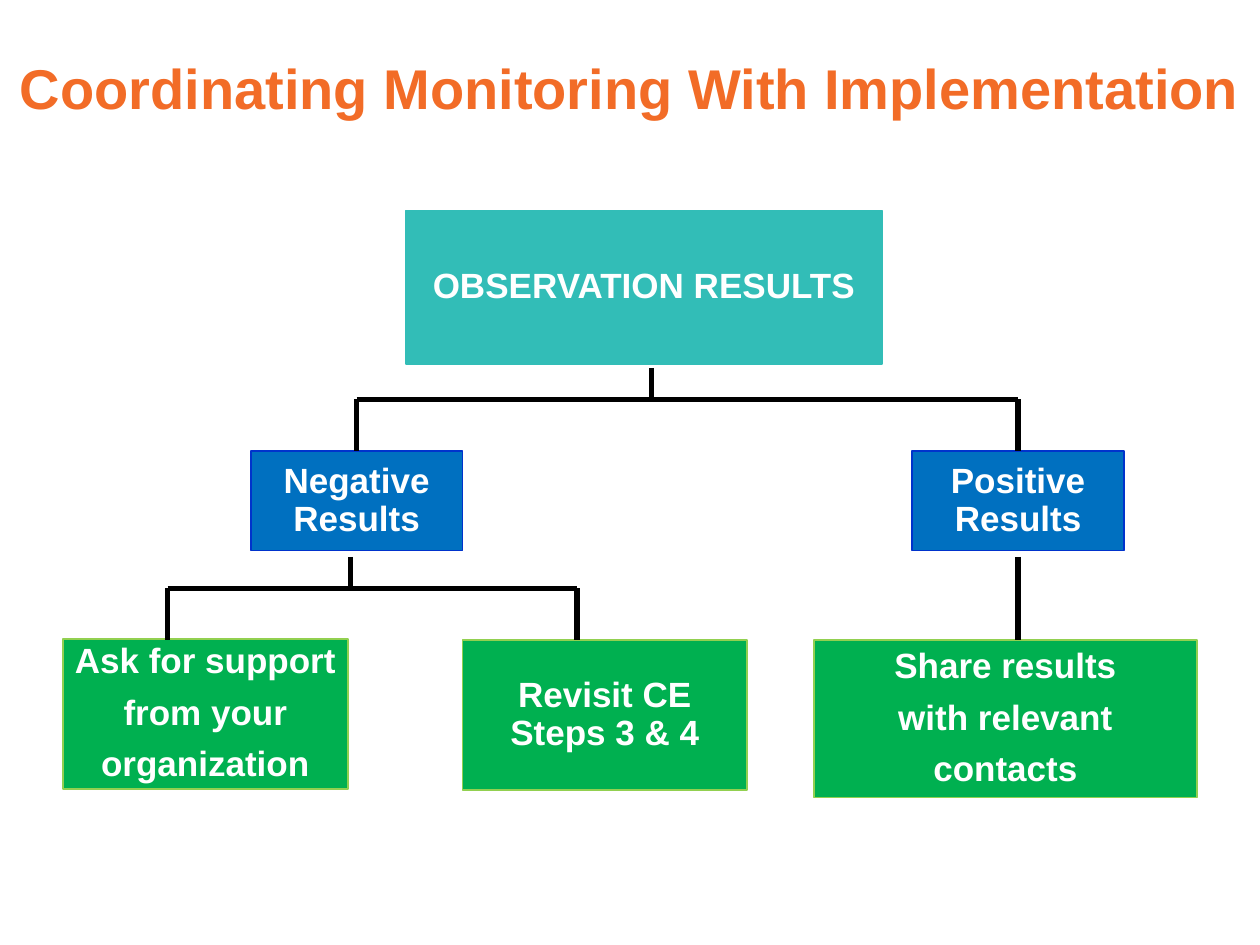
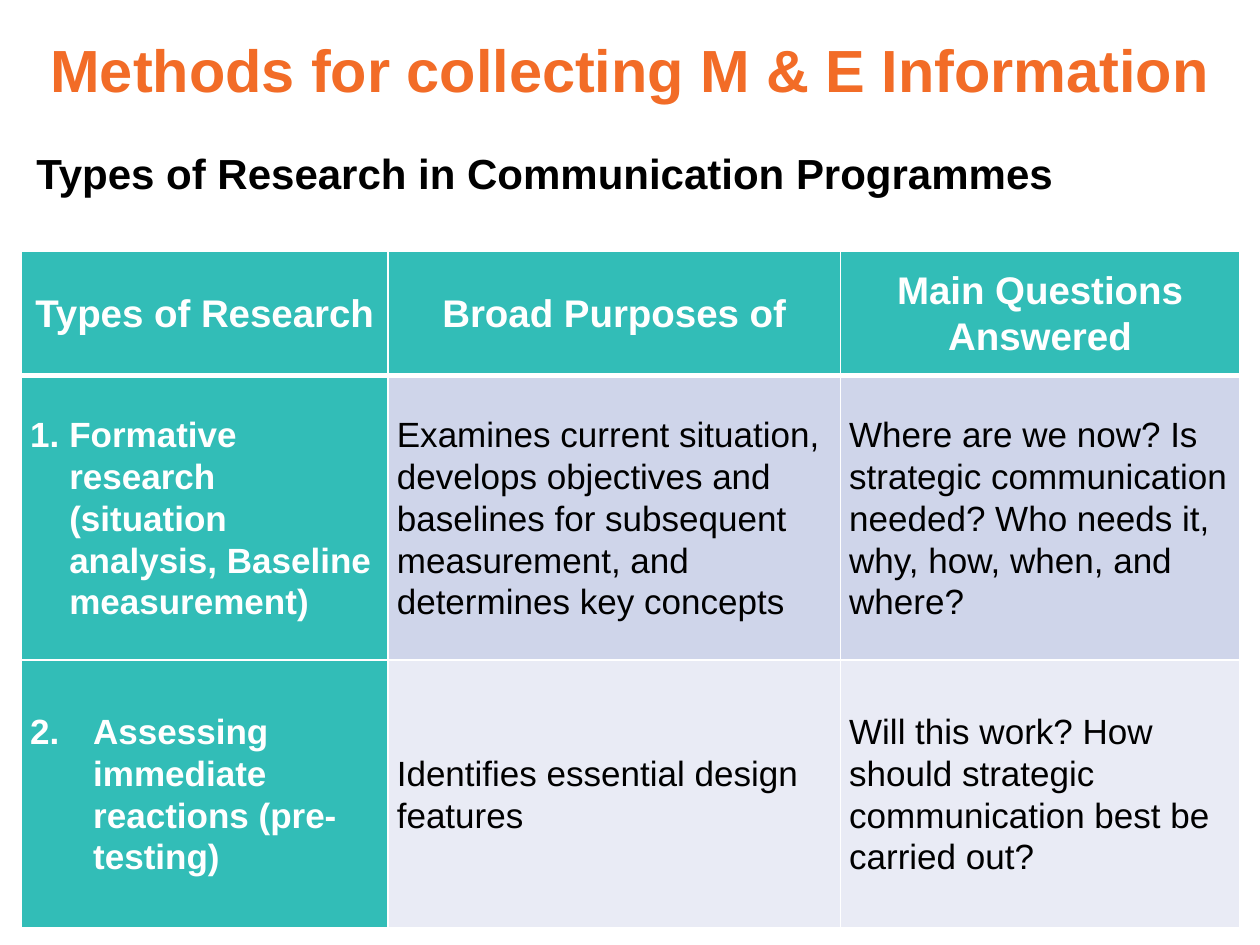
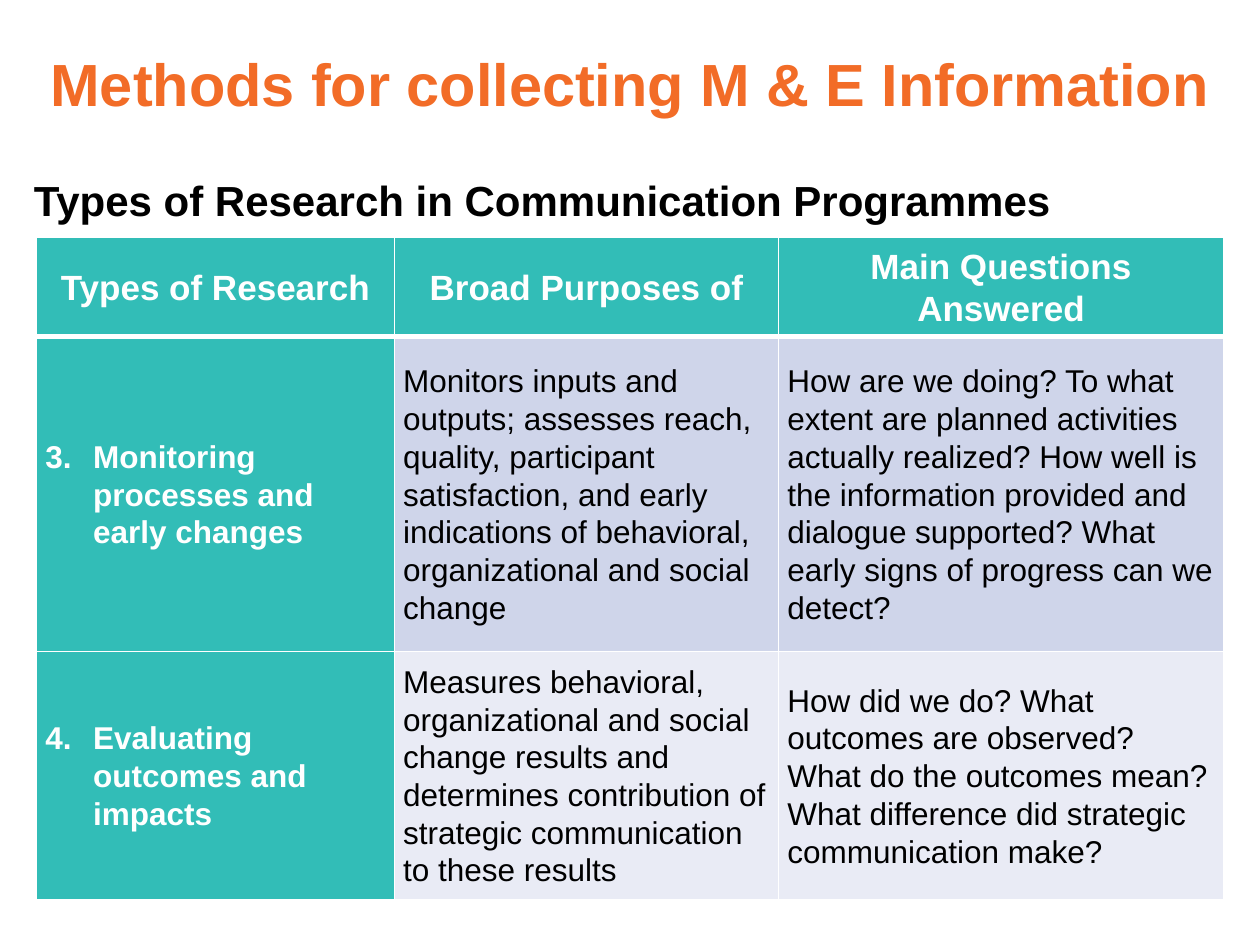
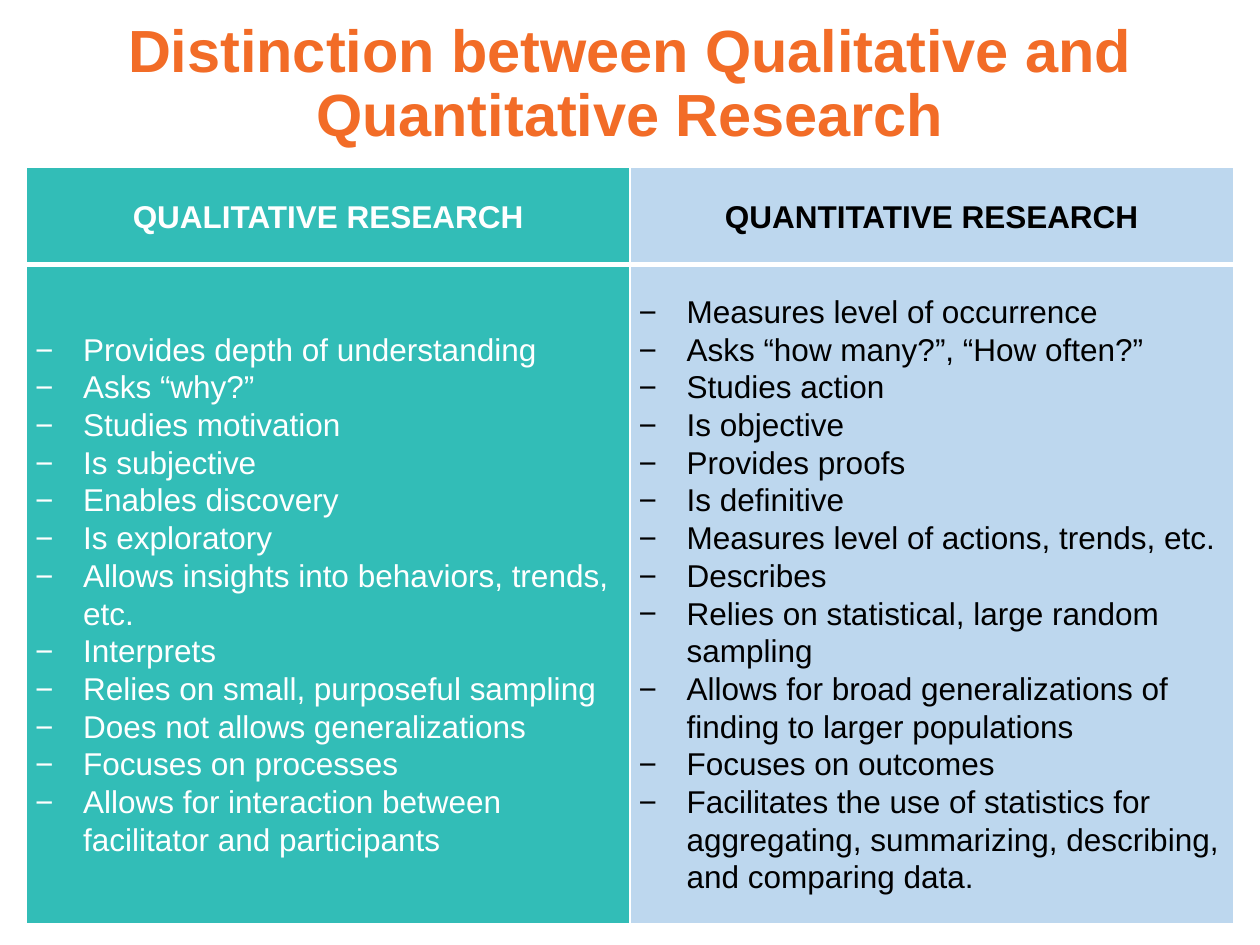
from pptx import Presentation
from pptx.dml.color import RGBColor
from pptx.enum.shapes import MSO_CONNECTOR, MSO_SHAPE
from pptx.enum.text import MSO_ANCHOR, MSO_AUTO_SIZE, PP_ALIGN
from pptx.oxml.ns import qn
from pptx.util import Inches, Pt
from lxml import etree

FONT = "Arial"
COLORS = {
    "orange": "F26C27", "teal": "32BDB7", "white": "FFFFFF", "black": "000000",
    "blue": "0070C0", "blue_edge": "0033CC", "green": "00B050", "green_edge": "92D050",
    "band_dark": "CFD5EA", "band_light": "E9EBF5", "pale_blue": "BDD7EE",
}
RGB = {name: RGBColor.from_string(value) for name, value in COLORS.items()}


def write(tf, lines, size=20, color="white", bold=True, align=PP_ALIGN.LEFT,
          spacing=0.9, after=0, indent=0, bullet=None):
    """Fill a text frame, one paragraph a line; bullet is a start number or a character."""
    tf.word_wrap = True
    for i, line in enumerate(lines):
        p = tf.paragraphs[0] if i == 0 else tf.add_paragraph()
        p.alignment, p.line_spacing = align, spacing
        p.space_before, p.space_after = Pt(0), Pt(after)
        r = p.add_run()
        r.text = line
        r.font.name, r.font.size, r.font.bold = FONT, Pt(size), bold
        r.font.color.rgb = RGB[color]
        if bullet:
            pPr = p._p.get_or_add_pPr()
            pPr.set("marL", str(Inches(indent)))
            pPr.set("indent", str(-Inches(indent)))
            if isinstance(bullet, int):
                etree.SubElement(pPr, qn("a:buAutoNum"), type="arabicPeriod",
                                 startAt=str(bullet))
            else:
                etree.SubElement(pPr, qn("a:buFont"), typeface=FONT)
                etree.SubElement(pPr, qn("a:buChar"), char=bullet)


def fill_cell(table, row, col, lines, fill, **fmt):
    """Write a cell with white borders, the one under the header row thicker."""
    cell = table.cell(row, col)
    cell.margin_left = cell.margin_right = Inches(0.07)
    cell.margin_top = cell.margin_bottom = 0
    cell.vertical_anchor = MSO_ANCHOR.MIDDLE
    tcPr = cell._tc.get_or_add_tcPr()
    widths = {"lnL": 1, "lnR": 1, "lnT": 3 if row == 1 else 1, "lnB": 3 if row == 0 else 1}
    for tag, width in widths.items():
        ln = etree.SubElement(tcPr, qn(f"a:{tag}"), w=str(Pt(width)))
        solid = etree.SubElement(ln, qn("a:solidFill"))
        etree.SubElement(solid, qn("a:srgbClr"), val=COLORS["white"])
    cell.fill.solid()
    cell.fill.fore_color.rgb = RGB[fill]
    write(cell.text_frame, lines, spacing=1.07, **fmt)


prs = Presentation()
prs.slide_width, prs.slide_height = Inches(10), Inches(7.5)

# Slides and titles: text, top, height, size
METHODS = "Methods for collecting M & E Information"
titles = [
    ("Coordinating Monitoring With Implementation", 0, 1.45, 32),
    (METHODS, 0, 1.17, 34),
    (METHODS, 0.11, 1.17, 34),
    ("Distinction between Qualitative and Quantitative Research", 0.13, 1.09, 34),
]
slides = []
for text, top, height, size in titles:
    s = prs.slides.add_slide(prs.slide_layouts[5])
    title = s.shapes.title
    title.left, title.top = 0, Inches(top)
    title.width, title.height = Inches(10), Inches(height)
    tf = title.text_frame
    tf.auto_size = MSO_AUTO_SIZE.NONE
    tf.vertical_anchor = MSO_ANCHOR.MIDDLE
    write(tf, [text], size=size, color="orange", align=PP_ALIGN.CENTER)
    slides.append(s)

# Slide 1: results tree
s = slides[0]
boxes = [
    (["OBSERVATION RESULTS"], 3.22, 1.67, 3.78, 1.22, "teal", "teal"),
    (["Negative Results"], 1.99, 3.58, 1.68, 0.79, "blue", "blue_edge"),
    (["Positive Results"], 7.24, 3.58, 1.68, 0.79, "blue", "blue_edge"),
    (["Share results", "with relevant", "contacts"], 6.46, 5.08, 3.04, 1.25,
     "green", "green_edge"),
    (["Ask for support", "from your", "organization"], 0.5, 5.07, 2.26, 1.19,
     "green", "green_edge"),
    (["Revisit CE Steps 3 & 4"], 3.67, 5.08, 2.26, 1.19, "green", "green_edge"),
]
nodes = {}
for lines, left, top, width, height, fill, edge in boxes:
    sp = s.shapes.add_shape(MSO_SHAPE.RECTANGLE, Inches(left), Inches(top),
                            Inches(width), Inches(height))
    sp.shadow.inherit = False
    sp.fill.solid()
    sp.fill.fore_color.rgb = RGB[fill]
    sp.line.color.rgb, sp.line.width = RGB[edge], Pt(1)
    tf = sp.text_frame
    tf.margin_left = tf.margin_right = tf.margin_top = tf.margin_bottom = Inches(0.08)
    tf.vertical_anchor = MSO_ANCHOR.MIDDLE
    write(tf, lines, align=PP_ALIGN.CENTER, after=8)
    nodes[lines[0]] = sp

# Each fork: stem x, left and right branch x, stem top, bar y, branch bottom
links = [(8.08, 4.42, 8.08, 5.08, None)]
forks = [
    (5.17, 2.83, 8.08, 2.92, 3.17, 3.58, ("Negative Results", "Positive Results")),
    (2.78, 1.33, 4.58, 4.42, 4.67, 5.08, (None, None)),
]
for stem, left, right, top, bar, bottom, (left_node, right_node) in forks:
    links += [(left, bar, right, bar, None), (stem, top, stem, bar, None),
              (left, bar, left, bottom, left_node), (right, bar, right, bottom, right_node)]
for x1, y1, x2, y2, node in links:
    line = s.shapes.add_connector(MSO_CONNECTOR.STRAIGHT, Inches(x1), Inches(y1),
                                  Inches(x2), Inches(y2))
    line.line.color.rgb, line.line.width = RGB["black"], Pt(3)
    etree.SubElement(line._element.spPr, qn("a:effectLst"))
    if node:
        line.end_connect(nodes[node], 0)

# Slides 2 and 3: types of research
headers = [["Types of Research"], ["Broad Purposes of"], ["Main Questions", "Answered"]]
research = [
    dict(slide=slides[1], subtitle=(0.19, 1.17), at=(0.17, 1.99), size=20,
         cols=[2.91, 3.59, 3.17], rows=[0.99, 2.26, 2.12], indents=[0.31, 0.5], start=1,
         body=[
             [["Formative research (situation analysis, Baseline measurement)"],
              ["Examines current situation, develops objectives and baselines for "
               "subsequent measurement, and determines key concepts"],
              ["Where are we now? Is strategic communication needed? Who needs it, "
               "why, how, when, and where?"]],
             [["Assessing immediate reactions (pre-testing)"],
              ["Identifies essential design", "features"],
              ["Will this work? How should strategic communication best be carried out?"]],
         ]),
    dict(slide=slides[2], subtitle=(0.17, 1.38), at=(0.29, 1.88), size=18,
         cols=[2.84, 3.05, 3.53], rows=[0.79, 2.5, 1.97], indents=[0.38, 0.38], start=3,
         body=[
             [["Monitoring processes and early changes"],
              ["Monitors inputs and outputs; assesses reach, quality, participant "
               "satisfaction, and early indications of behavioral, organizational "
               "and social change"],
              ["How are we doing? To what extent are planned activities actually "
               "realized? How well is the information provided and dialogue supported? "
               "What early signs of progress can we detect?"]],
             [["Evaluating outcomes and impacts"],
              ["Measures behavioral, organizational and social change results and "
               "determines contribution of strategic communication to these results"],
              ["How did we do? What outcomes are observed? What do the outcomes mean? "
               "What difference did strategic communication make?"]],
         ]),
]
for item in research:
    s, size = item["slide"], item["size"]
    left, top = item["subtitle"]
    box = s.shapes.add_textbox(Inches(left), Inches(top), Inches(8.62), Inches(0.5))
    write(box.text_frame, ["Types of Research in Communication Programmes"],
          size=24, color="black")
    left, top = item["at"]
    table = s.shapes.add_table(3, 3, Inches(left), Inches(top), Inches(sum(item["cols"])),
                               Inches(sum(item["rows"]))).table
    for column, width in zip(table.columns, item["cols"]):
        column.width = Inches(width)
    for row, height in zip(table.rows, item["rows"]):
        row.height = Inches(height)
    for col, lines in enumerate(headers):
        fill_cell(table, 0, col, lines, "teal", size=size + 2, align=PP_ALIGN.CENTER)
    for i, (kind, *answers) in enumerate(item["body"]):
        fill_cell(table, i + 1, 0, kind, "teal", size=size,
                  indent=item["indents"][i], bullet=item["start"] + i)
        for col, lines in enumerate(answers, 1):
            fill_cell(table, i + 1, col, lines, ("band_dark", "band_light")[i],
                      size=size, color="black", bold=False)

# Slide 4: qualitative against quantitative
comparison = [
    ("QUALITATIVE RESEARCH", "teal", "white", [
        "Provides depth of understanding",
        "Asks “why?”",
        "Studies motivation",
        "Is subjective",
        "Enables discovery",
        "Is exploratory",
        "Allows insights into behaviors, trends, etc.",
        "Interprets",
        "Relies on small, purposeful sampling",
        "Does not allows generalizations",
        "Focuses on processes",
        "Allows for interaction between facilitator and participants",
    ]),
    ("QUANTITATIVE RESEARCH", "pale_blue", "black", [
        "Measures level of occurrence",
        "Asks “how many?”, “How often?”",
        "Studies action",
        "Is objective",
        "Provides proofs",
        "Is definitive",
        "Measures level of actions, trends, etc.",
        "Describes",
        "Relies on statistical, large random sampling",
        "Allows for broad generalizations of finding to larger populations",
        "Focuses on outcomes",
        "Facilitates the use of statistics for aggregating, summarizing, describing, "
        "and comparing data.",
    ]),
]
table = slides[3].shapes.add_table(2, 2, Inches(0.21), Inches(1.33),
                                   Inches(9.58), Inches(6)).table
table.rows[0].height, table.rows[1].height = Inches(0.77), Inches(5.23)
for col, (heading, fill, color, points) in enumerate(comparison):
    fill_cell(table, 0, col, [heading], fill, size=18, color=color, align=PP_ALIGN.CENTER)
    fill_cell(table, 1, col, points, fill, size=18, color=color, bold=False,
              indent=0.38, bullet="−")

prs.save("out.pptx")
